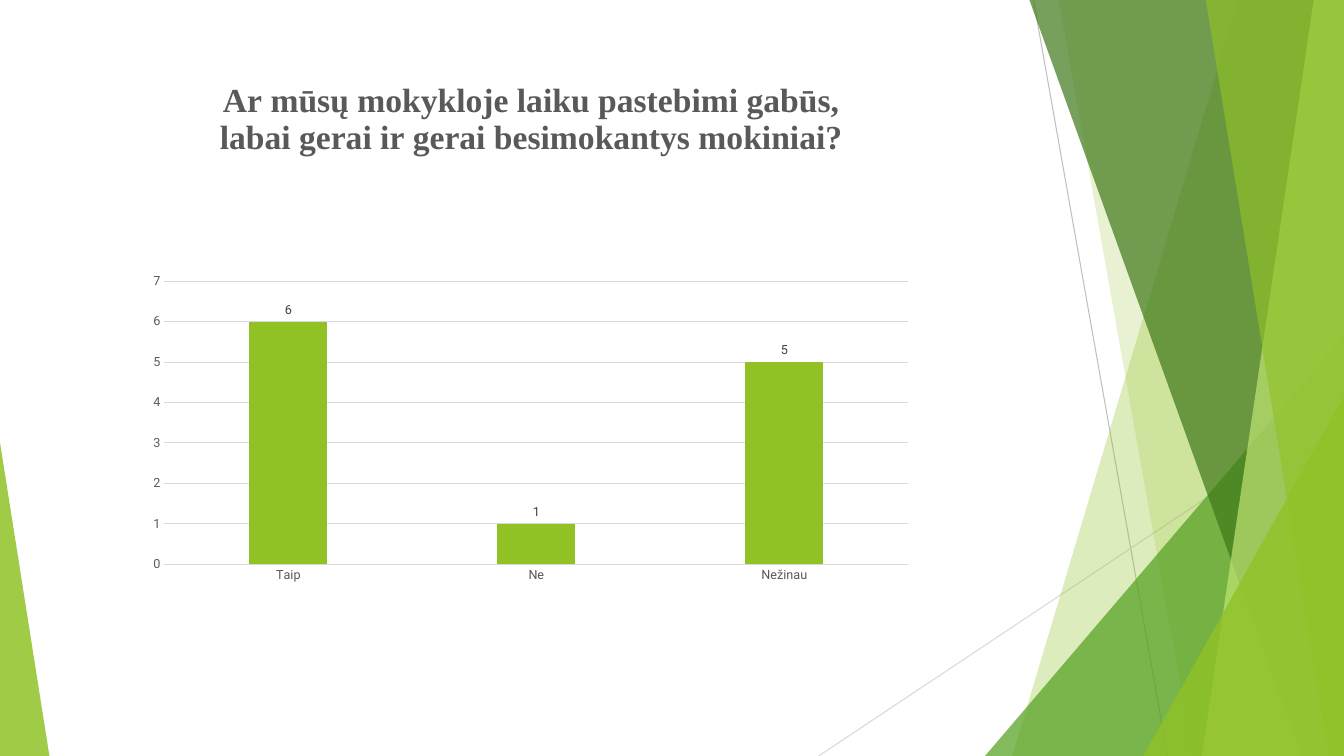
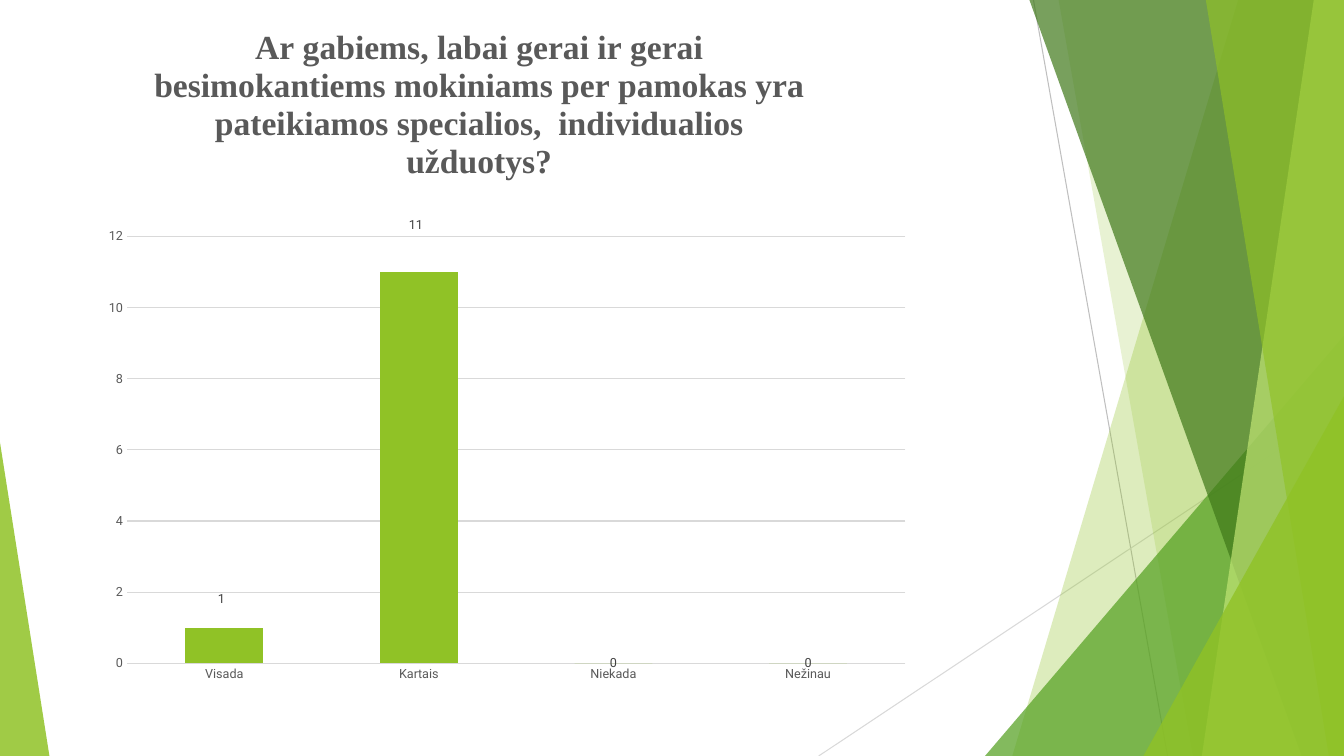
"""Build two survey slides with column charts over a shared green backdrop."""
from lxml import etree
from pptx import Presentation
from pptx import util as u
from pptx.chart import data as chart_data
from pptx.dml import color
from pptx.enum import chart as ch
from pptx.enum import shapes, text
from pptx.oxml import ns

PX = 9144
WIDTH, HEIGHT = 1333, 750
COLORS = {
    "lime": "90C226", "pale": "C0E474", "green": "54A021", "forest": "3F7819",
    "grey": "BFBFBF", "grid": "D9D9D9", "axis": "595959", "value": "404040",
    "black": "000000",
}
BODY_FONT, TITLE_FONT = "Roboto", "Times New Roman"
TITLE_FORMAT = {"size": u.Pt(24), "bold": True, "name": TITLE_FONT}
SMALL_FORMAT = {"size": u.Pt(9), "bold": False, "name": BODY_FONT}
CHART_FORMAT = {"size": u.Pt(10), "name": BODY_FONT}
AXIS_FORMAT = {
    "major_tick_mark": ch.XL_TICK_MARK.NONE,
    "minor_tick_mark": ch.XL_TICK_MARK.NONE,
}
EDGE_MODES = {"xMode": "edge", "yMode": "edge"}
C15 = "http://schemas.microsoft.com/office/drawing/2012/chart"
LABEL_EXTENSION = "{CE6537A1-D6FC-4f65-9D91-7224C49458BB}"

RAYS = [
    ((1025, 0), (1158, HEIGHT), "grey"),
    ((WIDTH, 403), (812, HEIGHT), "grid"),
]
BACK_PANELS = [(1228, 1004, "lime", 30), (1050, 1183, "lime", 20)]
FRONT_PANELS = [
    (1021, 1291, "forest", 70),
    (1303, 1192, "pale", 70),
    (1196, 1318, "lime", 65),
]
BACK_CORNER = (977, 333, 356, 1, "green", 72)
FRONT_CORNERS = [(1134, 393, 199, 1, "lime", 80), (0, 439, 49, 0, "lime", 85)]

QUESTIONS = [
    {
        "title": "Ar mūsų mokykloje laiku pastebimi gabūs, "
                 "labai gerai ir gerai besimokantys mokiniai?",
        "title_at": {"x": 85, "y": 12},
        "answers": {"Taip": 6, "Ne": 1, "Nežinau": 5},
        "kind": ch.XL_CHART_TYPE.COLUMN_CLUSTERED,
        "box": (127, 59, 800, 537),
        "plot_at": {"x": 36, "y": 220, "w": 738, "h": 281},
        "bars": {"gap_width": 219, "overlap": -27},
        "scale": {"minimum_scale": 0, "maximum_scale": 7, "major_unit": 1},
        "label_position": ch.XL_LABEL_POSITION.OUTSIDE_END,
        "moved_labels": {},
    },
    {
        "title": "Ar gabiems, labai gerai ir gerai besimokantiems mokiniams "
                 "per pamokas yra pateikiamos specialios,  individualios užduotys?",
        "title_at": {"x": 54, "y": 3},
        "answers": {"Visada": 1, "Kartais": 11, "Niekada": 0, "Nežinau": 0},
        "kind": ch.XL_CHART_TYPE.COLUMN_STACKED,
        "box": (93, 16, 822, 682),
        "plot_at": {"x": 33, "y": 219, "w": 772, "h": 423},
        "bars": {"gap_width": 150, "overlap": 100},
        "scale": {"minimum_scale": 0, "maximum_scale": 12, "major_unit": 2},
        "label_position": ch.XL_LABEL_POSITION.CENTER,
        "moved_labels": {0: {"x": -3, "y": -46}, 1: {"x": -3, "y": -241}},
    },
]


def px(*lengths):
    return [u.Emu(length * PX) for length in lengths]


def rgb(name):
    return color.RGBColor.from_string(COLORS[name])


def apply(target, formats):
    for attribute, value in formats.items():
        setattr(target, attribute, value)


def style_font(font, formats, color_name):
    apply(font, formats)
    font.color.rgb = rgb(color_name)


def style_line(line, color_name):
    line.color.rgb = rgb(color_name)
    line.width = u.Pt(0.75)


def tint(shape, color_name, opacity):
    shape.shadow.inherit = False
    shape.line.fill.background()
    shape.fill.solid()
    shape.fill.fore_color.rgb = rgb(color_name)
    for solid in shape.element.spPr.iter(ns.qn("a:srgbClr")):
        etree.SubElement(solid, ns.qn("a:alpha"), val=str(opacity * 1000))


def add_ray(slide, start, end, color_name):
    ray = slide.shapes.add_connector(shapes.MSO_CONNECTOR.STRAIGHT, *px(*start, *end))
    style_line(ray.line, color_name)
    etree.SubElement(ray.element.spPr, ns.qn("a:effectLst"))


def add_panel(slide, top_x, bottom_x, color_name, opacity):
    outline = slide.shapes.build_freeform(top_x, 0, scale=PX)
    outline.add_line_segments([(WIDTH, 0), (WIDTH, HEIGHT), (bottom_x, HEIGHT)])
    tint(outline.convert_to_shape(), color_name, opacity)


def add_corner(slide, left, top, width, apex, color_name, opacity):
    corner = slide.shapes.add_shape(
        shapes.MSO_SHAPE.ISOSCELES_TRIANGLE, *px(left, top, width, HEIGHT - top))
    corner.adjustments[0] = apex
    tint(corner, color_name, opacity)


def add_backdrop(slide):
    for ray in RAYS:
        add_ray(slide, *ray)
    for panel in BACK_PANELS:
        add_panel(slide, *panel)
    add_corner(slide, *BACK_CORNER)
    for panel in FRONT_PANELS:
        add_panel(slide, *panel)
    for corner in FRONT_CORNERS:
        add_corner(slide, *corner)


def place(element, index, position, box, modes):
    for previous in element.findall(ns.qn("c:layout")):
        element.remove(previous)
    width, height = box[2:]
    sides = {"x": width, "w": width, "y": height, "h": height}
    shares = {tag: round(length / sides[tag], 4) for tag, length in position.items()}
    layout = etree.Element(ns.qn("c:layout"))
    manual = etree.SubElement(layout, ns.qn("c:manualLayout"))
    for tag, value in {**modes, **shares}.items():
        etree.SubElement(manual, ns.qn(f"c:{tag}"), val=str(value))
    element.insert(index, layout)


def add_title(chart, question):
    chart.has_title = True
    heading = chart.chart_title
    heading.include_in_layout = False
    paragraph = heading.text_frame.paragraphs[0]
    paragraph.alignment = text.PP_ALIGN.CENTER
    run = paragraph.add_run()
    run.text = question["title"]
    style_font(run.font, TITLE_FORMAT, "axis")
    title = next(chart.element.iter(ns.qn("c:title")))
    place(title, 1, question["title_at"], question["box"], EDGE_MODES)


def style_axes(chart, scale):
    for axis in (chart.category_axis, chart.value_axis):
        apply(axis, AXIS_FORMAT)
        style_font(axis.tick_labels.font, SMALL_FORMAT, "axis")
    style_line(chart.category_axis.format.line, "grid")
    apply(chart.value_axis, scale)
    chart.value_axis.format.line.fill.background()
    style_line(chart.value_axis.major_gridlines.format.line, "grid")


def hide_leader_lines(chart):
    for flag in chart.element.iter(ns.qn("c:showLeaderLines")):
        flag.set("val", "0")
    for labels in chart.element.iter(ns.qn("c:dLbls")):
        extensions = etree.SubElement(labels, ns.qn("c:extLst"))
        extension = etree.SubElement(
            extensions, ns.qn("c:ext"), nsmap={"c15": C15}, uri=LABEL_EXTENSION)
        etree.SubElement(extension, f"{{{C15}}}showLeaderLines", val="0")


def style_bars(chart, question):
    plot = chart.plots[0]
    apply(plot, {**question["bars"], "vary_by_categories": False})
    bars = plot.series[0]
    bars.format.fill.solid()
    bars.format.fill.fore_color.rgb = rgb("lime")
    labels = bars.data_labels
    apply(labels, {"show_value": True, "position": question["label_position"]})
    style_font(labels.font, SMALL_FORMAT, "value")
    for index in question["moved_labels"]:
        label = bars.points[index].data_label
        label.position = question["label_position"]
        style_font(label.font, SMALL_FORMAT, "value")
    moved = list(chart.element.iter(ns.qn("c:dLbl")))
    for element, offset in zip(moved, question["moved_labels"].values()):
        place(element, 1, offset, question["box"], {})
    hide_leader_lines(chart)


def add_answers(slide, question):
    answers = chart_data.CategoryChartData()
    answers.categories = list(question["answers"])
    answers.add_series("Series 1", list(question["answers"].values()))
    chart = slide.shapes.add_chart(question["kind"], *px(*question["box"]), answers).chart
    chart.has_legend = False
    style_font(chart.font, CHART_FORMAT, "black")
    add_title(chart, question)
    style_axes(chart, question["scale"])
    style_bars(chart, question)
    plot_area = next(chart.element.iter(ns.qn("c:plotArea")))
    place(plot_area, 0, question["plot_at"], question["box"],
          {"layoutTarget": "inner", **EDGE_MODES})


def main():
    deck = Presentation()
    deck.slide_width, deck.slide_height = px(WIDTH, HEIGHT)
    for question in QUESTIONS:
        slide = deck.slides.add_slide(deck.slide_layouts[6])
        add_backdrop(slide)
        add_answers(slide, question)
    deck.save("out.pptx")


if __name__ == "__main__":
    main()
